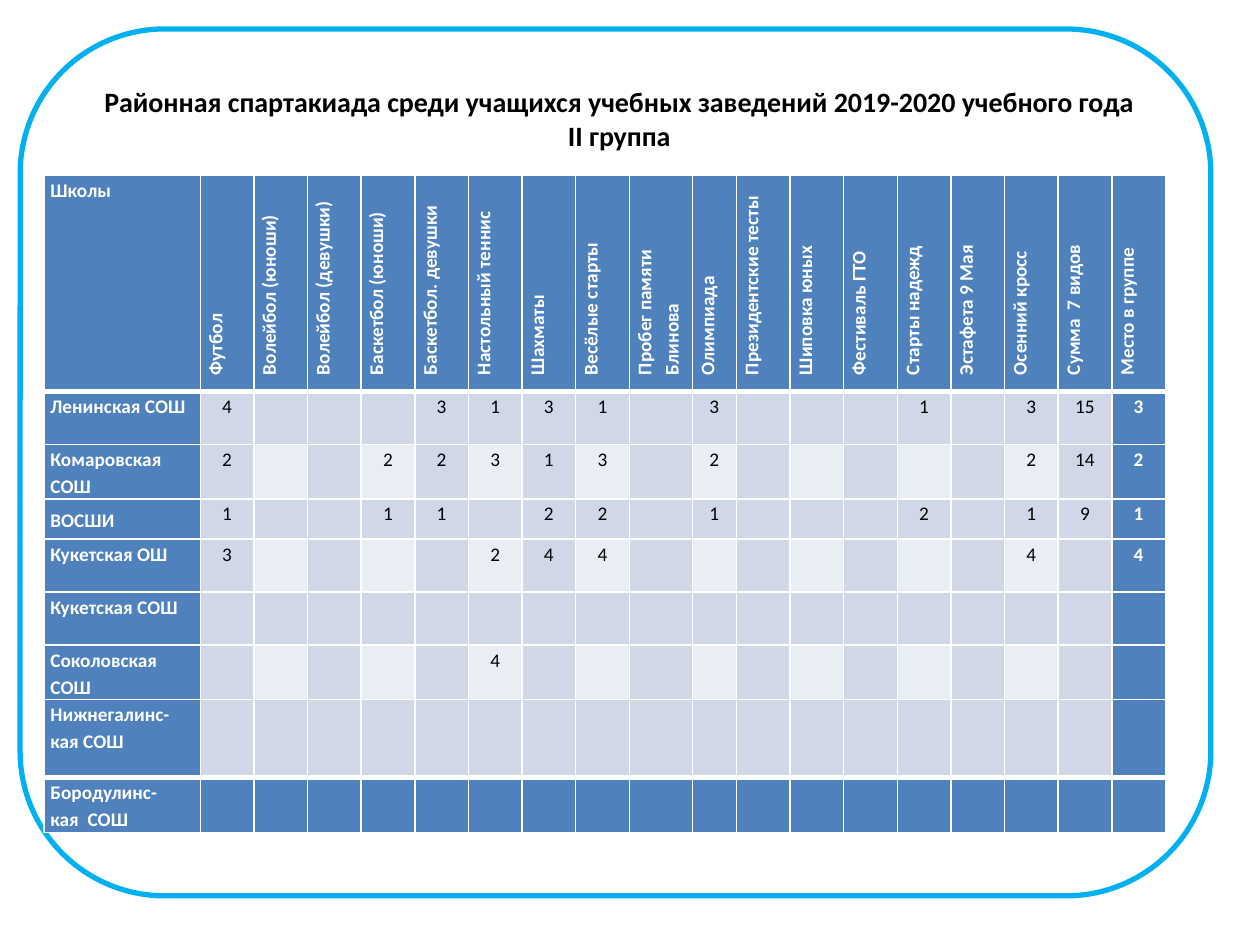
from pptx import Presentation
from pptx.dml.color import RGBColor
from pptx.enum.shapes import MSO_SHAPE as Shape
from pptx.enum.text import MSO_ANCHOR as Anchor, PP_ALIGN as Align
from pptx.util import Inches, Pt
from lxml.etree import SubElement as Sub

NS = "{http://schemas.openxmlformats.org/drawingml/2006/main}"
BLUE, BAND, PALE, WHITE, BLACK = "4F81BD", "D0D8E8", "E9EDF4", "FFFFFF", "000000"
HEAD = {"size": Pt(11), "name": "Calibri", "bold": True, "color": WHITE}
BODY = {**HEAD, "bold": False, "color": BLACK}
TITLE = {**HEAD, "size": Pt(16), "color": BLACK}
INSETS = {"margin_left": Inches(0.05), "margin_right": Inches(0.05),
          "margin_top": 0, "margin_bottom": 0}

SPORTS = ["Футбол", "Волейбол (юноши)", "Волейбол (девушки)", "Баскетбол (юноши)",
          "Баскетбол. девушки", "Настольный теннис", "Шахматы", "Весёлые старты",
          "Пробег памяти  Блинова", "Олимпиада", "Президентские тесты",
          "Шиповка юных", "Фестиваль ГТО", "Старты надежд", "Эстафета 9 Мая",
          "Осенний кросс", "Сумма  7 видов", "Место в группе"]
SCHOOLS = [
    ("Ленинская СОШ", 0.42, "4,,,,3,1,3,1,,3,,,,1,,3,15,3"),
    ("Комаровская СОШ", 0.42, "2,,,2,2,3,1,3,,2,,,,,,2,14,2"),
    ("ВОСШИ", 0.32, "1,,,1,1,,2,2,,1,,,,2,,1,9,1"),
    ("Кукетская ОШ", 0.42, "3,,,,,2,4,4,,,,,,,,4,,4"),
    ("Кукетская СОШ", 0.42, ""),
    ("Соколовская СОШ", 0.42, ",,,,,4"),
    ("Нижнегалинс-\nкая СОШ", 0.62, ""),
    ("Бородулинс-\nкая  СОШ", 0.42, ""),
]
LAST, PLACE = len(SCHOOLS), len(SPORTS)


def rgb(code):
    """Turn a hex string into a colour."""
    return RGBColor.from_string(code)


def style(font, form):
    """Apply format values to a font."""
    for key, val in form.items():
        if key == "color":
            font.color.rgb = rgb(val)
        else:
            setattr(font, key, val)


def write(frame, text, form, **layout):
    """Fill a text frame and format its paragraphs and runs."""
    frame.text = text
    for par in frame.paragraphs:
        for key, val in layout.items():
            setattr(par, key, val)
        for run in par.runs:
            style(run.font, form)


def edge(cell, row):
    """Draw white cell borders, thick below the header and above the last row."""
    wide = {0: "B", LAST: "T", 1: "T", LAST - 1: "B"}.get(row)
    for side in "LRTB":
        line = Sub(cell._tc.get_or_add_tcPr(), f"{NS}ln{side}",
                   w=str(Pt(3 if side == wide else 1)))
        Sub(Sub(line, f"{NS}solidFill"), f"{NS}srgbClr", val=WHITE)


def tint(row, col):
    """Choose the fill of a cell from its place in the grid."""
    if row in (0, LAST) or col in (0, PLACE):
        return BLUE
    return PALE if row % 2 == 0 and col % 2 == 0 else BAND


def fill(cell, row, col, text):
    """Format one table cell and write its text."""
    for key, val in INSETS.items():
        setattr(cell, key, val)
    edge(cell, row)
    hue = tint(row, col)
    cell.fill.solid()
    cell.fill.fore_color.rgb = rgb(hue)
    if not text:
        return
    align = Align.CENTER if row and col else Align.LEFT
    write(cell.text_frame, text, HEAD if hue == BLUE else BODY,
          alignment=align, line_spacing=1.15)
    if row == 0 and col:
        cell._tc.get_or_add_tcPr().set("vert", "vert270")
        for par in cell.text_frame.paragraphs:
            par._p.get_or_add_pPr().set("marL", str(Inches(0.08)))
    if text == "ВОСШИ":
        cell.vertical_anchor = Anchor.MIDDLE


def scores(slide, x, y, w, h):
    """Place the table of results."""
    rows = [["Школы", *SPORTS]]
    rows += [[name, *(marks.split(",") + [""] * PLACE)[:PLACE]]
             for name, _, marks in SCHOOLS]
    table = slide.shapes.add_table(len(rows), PLACE + 1, x, y, w, h).table
    fixed = {0: Inches(1.24), 9: Inches(0.5), 10: Inches(0.35)}
    even = (w - sum(fixed.values())) // (PLACE + 1 - len(fixed))
    for num, col in enumerate(table.columns):
        col.width = fixed.get(num, even)
    tall = [Inches(high) for _, high, _ in SCHOOLS]
    for row, high in zip(table.rows, [h - sum(tall), *tall]):
        row.height = high
    for r, row in enumerate(rows):
        for c, text in enumerate(row):
            fill(table.cell(r, c), r, c, text)


def border(slide, x, y, w, h):
    """Place the rounded frame behind the title."""
    box = slide.shapes.add_shape(Shape.ROUNDED_RECTANGLE, x, y, w, h)
    box.shadow.inherit = False
    box.fill.solid()
    box.fill.fore_color.rgb = rgb(WHITE)
    box.line.color.rgb = rgb("00B0F0")
    box.line.width = Pt(3)
    slide.shapes.title.element.addprevious(box.element)


def heading(slide, x, y, w, h):
    """Place and format the title."""
    title = slide.shapes.title
    for key, val in zip(("left", "top", "width", "height"), (x, y, w, h)):
        setattr(title, key, val)
    frame = title.text_frame
    frame.word_wrap = True
    frame.vertical_anchor = Anchor.MIDDLE
    write(frame, "Районная спартакиада среди учащихся учебных заведений "
          "2019-2020 учебного года\vII группа", TITLE, alignment=Align.CENTER)


def main():
    """Build and save the slide."""
    deck = Presentation()
    deck.slide_width, deck.slide_height = Inches(10), Inches(7.5)
    slide = deck.slides.add_slide(deck.slide_layouts[5])
    border(slide, *map(Inches, (0.16, 0.23, 9.45, 6.88)))
    heading(slide, *map(Inches, (0.62, 0.55, 8.59, 0.78)))
    scores(slide, *map(Inches, (0.35, 1.39, 8.9, 4.97)))
    deck.save("out.pptx")


if __name__ == "__main__":
    main()
